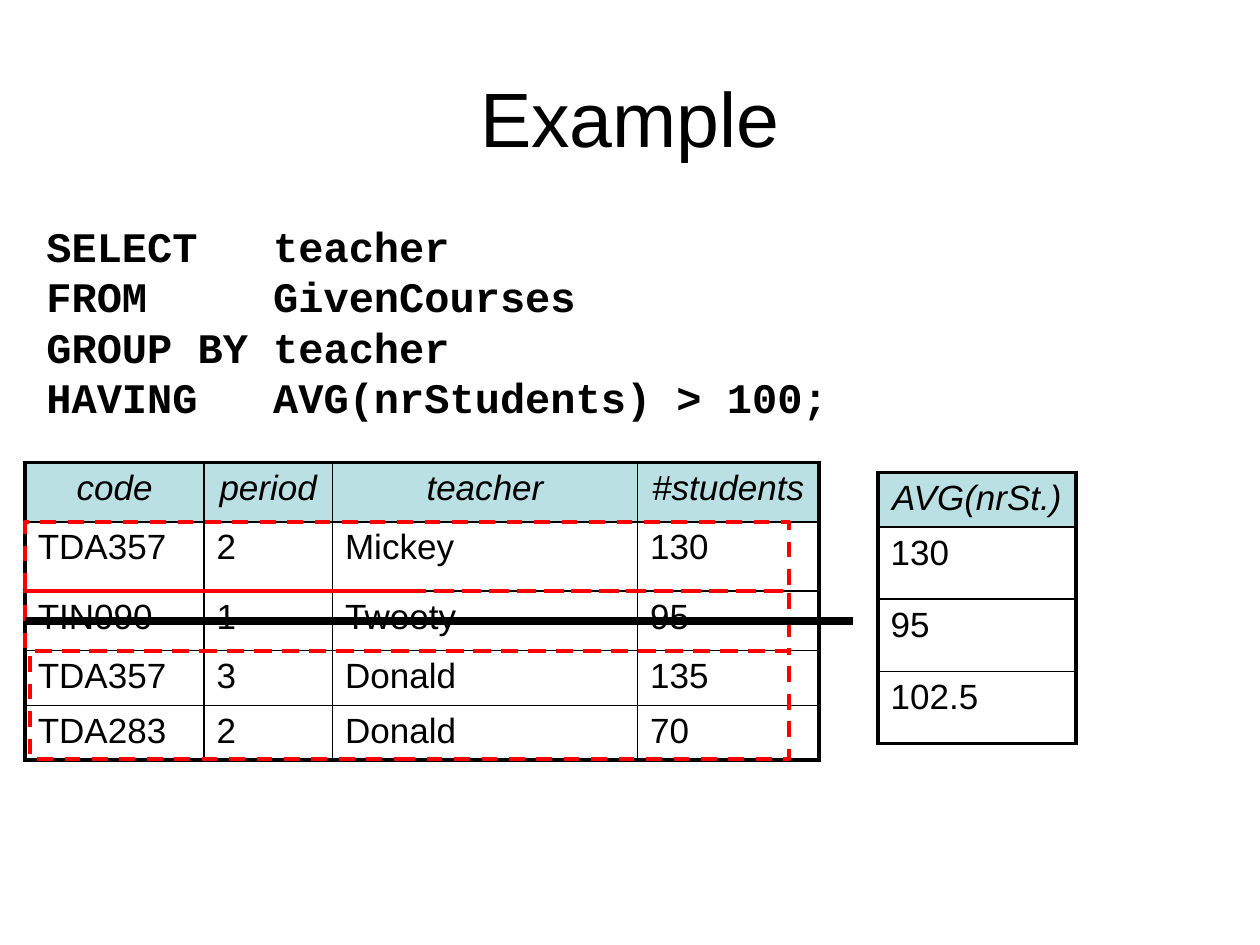
from lxml.etree import SubElement
from pptx import Presentation
from pptx.dml.color import RGBColor
from pptx.enum.dml import MSO_LINE
from pptx.enum.shapes import MSO_CONNECTOR, MSO_SHAPE
from pptx.enum.text import MSO_ANCHOR, PP_ALIGN
from pptx.oxml.ns import qn
from pptx.util import Pt

COLORS = {"ink": "000000", "header": "BBE0E3", "group": "FF0000"}
THICK, THIN = 2.25, 1

QUERY = [
    ("SELECT", "teacher"),
    ("FROM", "GivenCourses"),
    ("GROUP BY", "teacher"),
    ("HAVING", "AVG(nrStudents) > 100;"),
]
COURSES = [
    ["code", "period", "teacher", "#students"],
    ["TDA357", "2", "Mickey", "130"],
    ["TIN090", "1", "Tweety", "95"],
    ["TDA357", "3", "Donald", "135"],
    ["TDA283", "2", "Donald", "70"],
]
AVERAGES = [["AVG(nrSt.)"], ["130"], ["95"], ["102.5"]]
COURSE_COLUMNS = [102.2, 73.4, 174.4, 103.6]
COURSE_ROWS = [34, 39.6, 34, 31, 31]


def color(name):
    return RGBColor.from_string(COLORS[name])


def format_runs(paragraph, font_name, size, bold=False, italic=False):
    for run in paragraph.runs:
        run.font.name = font_name
        run.font.size = Pt(size)
        run.font.bold = bold
        run.font.italic = italic
        run.font.color.rgb = color("ink")


def add_title(slide, left, top, width, height):
    title = slide.shapes.title
    title.left, title.top, title.width, title.height = map(Pt, (left, top, width, height))
    title.text_frame.text = "Example"
    title.text_frame.vertical_anchor = MSO_ANCHOR.MIDDLE
    paragraph = title.text_frame.paragraphs[0]
    paragraph.alignment = PP_ALIGN.CENTER
    format_runs(paragraph, "Arial", 44)


def add_query(slide, left, top, width, height):
    box = slide.shapes.add_textbox(Pt(left), Pt(top), Pt(width), Pt(height))
    frame = box.text_frame
    frame.word_wrap = True
    frame.text = "\n".join(f"{keyword}\t{operand}" for keyword, operand in QUERY)
    for paragraph in frame.paragraphs:
        # Operands line up nine characters in
        tabs = SubElement(paragraph._p.get_or_add_pPr(), qn("a:tabLst"))
        SubElement(tabs, qn("a:tab"), pos=str(Pt(129.6)), algn="l")
        format_runs(paragraph, "Courier New", 24, bold=True)


def set_borders(cell, widths):
    properties = cell._tc.get_or_add_tcPr()
    for side, width in zip("LRTB", widths):
        line = SubElement(properties, qn(f"a:ln{side}"), w=str(Pt(width)))
        fill = SubElement(line, qn("a:solidFill"))
        SubElement(fill, qn("a:srgbClr"), val=COLORS["ink"])


def add_grid(slide, left, top, columns, heights, rows):
    """Table with a tinted header row, thick outer and thin inner borders."""
    frame = slide.shapes.add_table(len(rows), len(columns), Pt(left), Pt(top),
                                   Pt(sum(columns)), Pt(sum(heights)))
    table = frame.table
    for column, width in zip(table.columns, columns):
        column.width = Pt(width)
    for row, height in zip(table.rows, heights):
        row.height = Pt(height)
    last_row, last_column = len(rows) - 1, len(columns) - 1
    for r, values in enumerate(rows):
        for c, value in enumerate(values):
            cell = table.cell(r, c)
            outer_sides = (c == 0, c == last_column, r == 0, r == last_row)
            set_borders(cell, [THICK if outer else THIN for outer in outer_sides])
            is_header = r == 0
            if is_header:
                cell.fill.solid()
                cell.fill.fore_color.rgb = color("header")
            else:
                cell.fill.background()
            cell.text_frame.text = value
            paragraph = cell.text_frame.paragraphs[0]
            paragraph.alignment = PP_ALIGN.CENTER if is_header else PP_ALIGN.LEFT
            format_runs(paragraph, "Arial", 20, italic=is_header)


def add_group_box(slide, left, top, width, height):
    box = slide.shapes.add_shape(MSO_SHAPE.RECTANGLE, Pt(left), Pt(top), Pt(width), Pt(height))
    box.shadow.inherit = False
    box.fill.background()
    box.line.color.rgb = color("group")
    box.line.width = Pt(THICK)
    box.line.dash_style = MSO_LINE.DASH


def add_strike(slide, left, y, width):
    strike = slide.shapes.add_connector(MSO_CONNECTOR.STRAIGHT, Pt(left), Pt(y),
                                        Pt(left + width), Pt(y))
    strike.line.color.rgb = color("ink")
    strike.line.width = Pt(4.5)
    SubElement(strike._element.spPr, qn("a:effectLst"))


def add_courses(slide, left, top):
    add_grid(slide, left, top, COURSE_COLUMNS, COURSE_ROWS, COURSES)
    row_tops = [top + sum(COURSE_ROWS[:r]) for r in range(len(COURSE_ROWS))]
    right = left + 436.3
    # One dashed box per teacher: (first row, row count, left inset)
    for first, count, inset in [(3, 2, 2.9), (2, 1, 0), (1, 1, 0)]:
        add_group_box(slide, left + inset, row_tops[first], right - left - inset,
                      sum(COURSE_ROWS[first:first + count]))
    # The group that fails the HAVING condition
    add_strike(slide, left, row_tops[2] + COURSE_ROWS[2] / 2, 473)


def main():
    presentation = Presentation()
    presentation.slide_width, presentation.slide_height = Pt(720), Pt(540)
    slide = presentation.slides.add_slide(presentation.slide_layouts[5])
    add_title(slide, 36, 21.6, 648, 90)
    add_query(slide, 19.4, 122.4, 538.6, 122.4)
    add_courses(slide, 14.4, 264.2)
    add_grid(slide, 501.8, 270, [113], [31, 41.2, 41.2, 41.2], AVERAGES)
    presentation.save("out.pptx")


if __name__ == "__main__":
    main()
